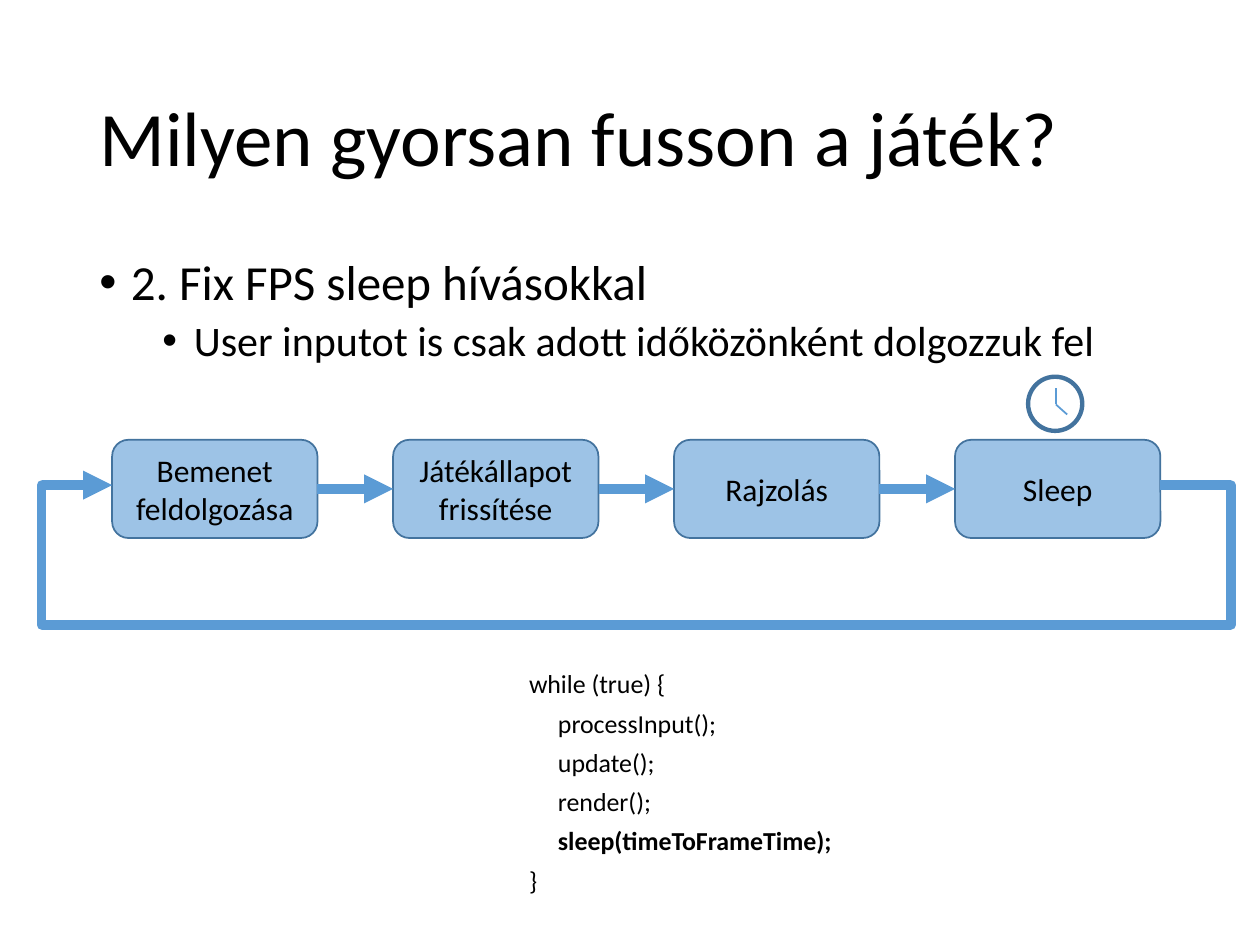
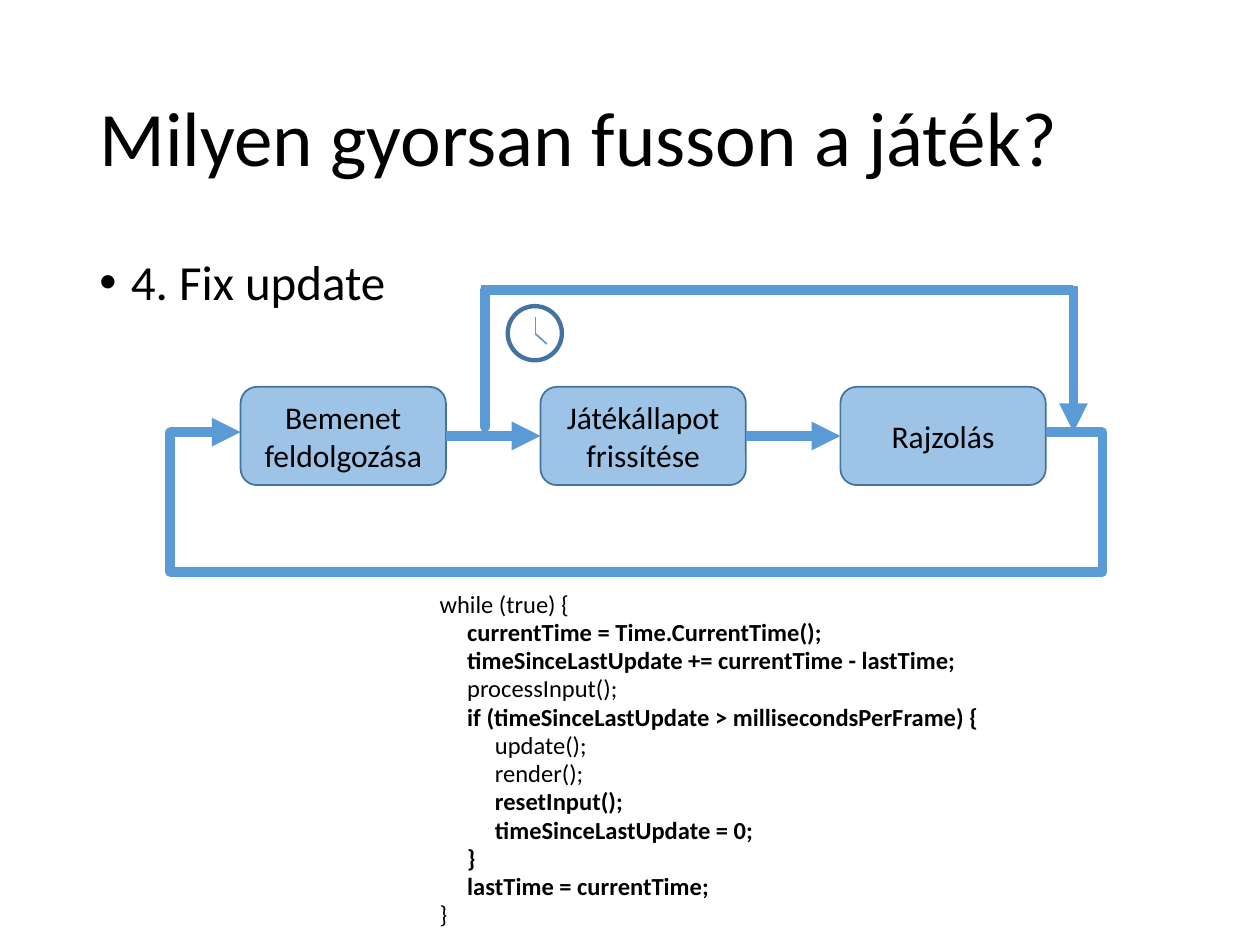
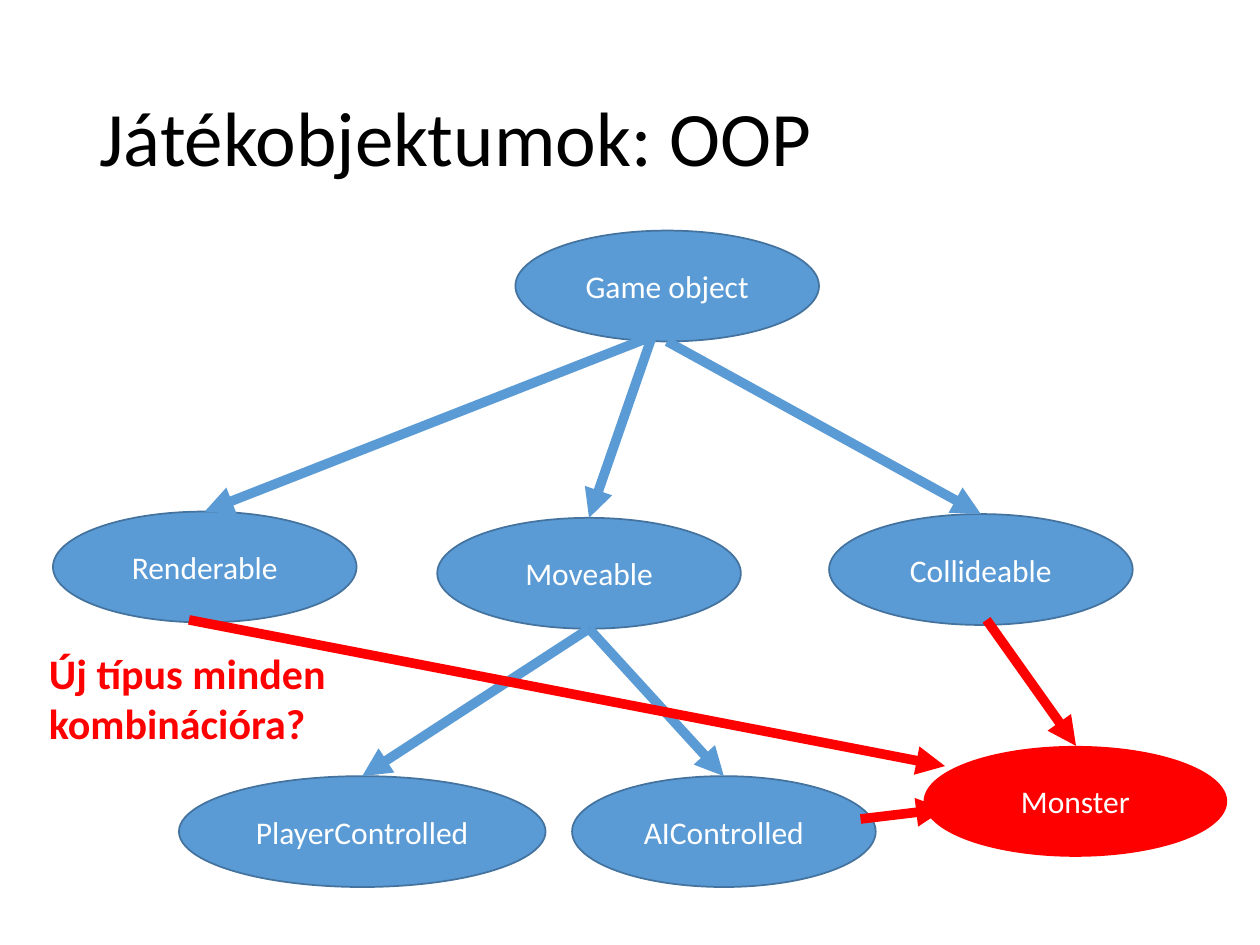
from itertools import pairwise

from lxml import etree
from pptx import Presentation
from pptx.dml.color import RGBColor
from pptx.enum.shapes import MSO_CONNECTOR, MSO_SHAPE
from pptx.enum.text import MSO_ANCHOR, PP_ALIGN
from pptx.oxml.ns import qn
from pptx.util import Inches, Pt

STRAIGHT = MSO_CONNECTOR.STRAIGHT
ROUNDED, OVAL = MSO_SHAPE.ROUNDED_RECTANGLE, MSO_SHAPE.OVAL
LEFT, CENTER = PP_ALIGN.LEFT, PP_ALIGN.CENTER
TOP, MIDDLE = MSO_ANCHOR.TOP, MSO_ANCHOR.MIDDLE
FONT = "Calibri"
BLACK, WHITE, RED = "000000", "FFFFFF", "FF0000"
BLUE, PALE_BLUE, DARK_BLUE = "5B9BD5", "9DC3E6", "43739E"

prs = Presentation()
prs.slide_width, prs.slide_height = Inches(10), Inches(7.5)
COL, ROW = prs.slide_width / 10, prs.slide_height / 7.5


def write(slide, lines, left, top, width, height, kind=None, fill=None, outline=None,
          weight=1, align=LEFT, anchor=TOP, **base):
    area = int(left * COL), int(top * ROW), int(width * COL), int(height * ROW)
    if kind is None:
        shape = slide.shapes.add_textbox(*area)
    else:
        shape = slide.shapes.add_shape(kind, *area)
        shape.shadow.inherit = False
        for paint, color in ((shape.fill, fill), (shape.line.fill, outline)):
            if color:
                paint.solid()
                paint.fore_color.rgb = RGBColor.from_string(color)
            else:
                paint.background()
        if outline:
            shape.line.width = Pt(weight)
    frame = shape.text_frame
    frame.word_wrap = True
    frame.vertical_anchor = anchor
    for number, (text, own) in enumerate(lines):
        style = {"size": 18, "color": BLACK, "bold": False, "spacing": 1, "before": 0,
                 "indent": 0, "bullet": False, **base, **own}
        paragraph = frame.add_paragraph() if number else frame.paragraphs[0]
        paragraph.alignment = align
        paragraph.line_spacing = style["spacing"]
        paragraph.space_before = Pt(style["before"])
        props = paragraph._p.get_or_add_pPr()
        props.set("marL", str(Inches(style["indent"])))
        if style["bullet"]:
            props.set("indent", str(-Inches(0.25)))
            etree.SubElement(props, qn("a:buFont"), typeface="Arial")
            etree.SubElement(props, qn("a:buChar"), char="•")
        run = paragraph.add_run()
        run.text = text
        run.font.name = FONT
        run.font.size = Pt(style["size"])
        run.font.bold = style["bold"]
        run.font.color.rgb = RGBColor.from_string(style["color"])


def connect(slide, start, end, color=BLUE, weight=5.5, arrow=False, cap="flat"):
    line = slide.shapes.add_connector(
        STRAIGHT, int(start[0] * COL), int(start[1] * ROW), int(end[0] * COL), int(end[1] * ROW))
    line.line.color.rgb = RGBColor.from_string(color)
    line.line.width = Pt(weight)
    stroke = line.line._get_or_add_ln()
    stroke.set("cap", cap)
    if arrow:
        etree.SubElement(stroke, qn("a:tailEnd"), type="triangle")
    etree.SubElement(line._element.spPr, qn("a:effectLst"))


SPEED = "Milyen gyorsan fusson a játék?"
slides = []
for title in (SPEED, SPEED, "Játékobjektumok: OOP"):
    slide = prs.slides.add_slide(prs.slide_layouts[6])
    write(slide, [(title, {})], 0.69, 0.4, 8.62, 1.45, anchor=MIDDLE, size=44, spacing=0.9)
    slides.append(slide)
sleep_slide, update_slide, oop_slide = slides

point = {"size": 28, "before": 10, "indent": 0.25}
subpoint = {"size": 24, "before": 5, "indent": 0.75}
steps = ["Bemenet feldolgozása", "Játékállapot frissítése", "Rajzolás"]
loops = [
    (sleep_slide,
     [("2. Fix FPS sleep hívásokkal", point),
      ("User inputot is csak adott időközönként dolgozzuk fel", subpoint)],
     steps + ["Sleep"], 0.89, 2.23, 3.49, 9.77, (8.38, 3.21)),
    (update_slide, [("4. Fix update", point)],
     steps, 1.91, 2.38, 3.07, 8.75, (4.25, 2.65)),
]
STEP_W, STEP_H = 1.63, 0.78
for slide, points, names, first, pitch, top, loop_right, (clock_x, clock_y) in loops:
    write(slide, points, 0.69, 2, 8.62, 4.76, spacing=0.9, bullet=True)

    lefts = [first + pitch * i for i in range(len(names))]
    for name, left in zip(names, lefts):
        write(slide, [(name, {})], left, top, STEP_W, STEP_H, ROUNDED, PALE_BLUE, DARK_BLUE,
              align=CENTER, anchor=MIDDLE)
    middle = top + STEP_H / 2
    for left, following in pairwise(lefts):
        connect(slide, (left + STEP_W, middle), (following, middle), arrow=True)

    loop_left, loop_top, loop_bottom = first - 0.56, top + 0.36, top + 1.47
    connect(slide, (lefts[-1] + STEP_W, loop_top), (loop_right, loop_top))
    connect(slide, (loop_left, loop_bottom), (loop_right, loop_bottom))
    connect(slide, (loop_left, loop_top), (first, loop_top), arrow=True)
    for x in (loop_left, loop_right):
        connect(slide, (x, loop_top), (x, loop_bottom), cap="rnd")

    write(slide, [], clock_x - 0.22, clock_y - 0.22, 0.43, 0.43, OVAL,
          outline=DARK_BLUE, weight=2.5)
    for dx, dy in ((0, -0.13), (0.09, 0.08)):
        connect(slide, (clock_x, clock_y), (clock_x + dx, clock_y + dy), weight=1)

detour_left, detour_right, detour_top = 3.85, 8.52, 2.3
connect(update_slide, (detour_left, detour_top), (detour_left, 3.39), cap="rnd")
connect(update_slide, (detour_left - 0.03, detour_top), (detour_right, detour_top))
connect(update_slide, (detour_right, detour_top - 0.03), (detour_right, 3.43), arrow=True)

sleep_code = [
    (0, "while (true) {", False),
    (1, "processInput();", False),
    (1, "update();", False),
    (1, "render();", False),
    (1, "sleep(timeToFrameTime);", True),
    (0, "}", False),
]
update_code = [
    (0, "while (true) {", False),
    (1, "currentTime = Time.CurrentTime();", True),
    (1, "timeSinceLastUpdate += currentTime - lastTime;", True),
    (1, "processInput();", False),
    (1, "if (timeSinceLastUpdate > millisecondsPerFrame) {", True),
    (2, "update();", False),
    (2, "render();", False),
    (2, "resetInput();", True),
    (2, "timeSinceLastUpdate = 0;", True),
    (1, "}", True),
    (1, "lastTime = currentTime;", True),
    (0, "}", False),
]
for slide, code, area, tab, style in (
    (sleep_slide, sleep_code, (4.1, 5.32, 2.75, 1.98), 0.23,
     {"size": 14.8, "spacing": 0.7, "before": 10}),
    (update_slide, update_code, (3.39, 4.65, 5.36, 2.54), 0.22,
     {"size": 14, "spacing": 0.9, "before": 1}),
):
    lines = [(text, {"indent": tab * level, "bold": bold}) for level, text, bold in code]
    write(slide, lines, *area, **style)

NODE_W, NODE_H = 2.41, 0.88
nodes = {
    "Game object": (4.09, 1.83, NODE_W),
    "Renderable": (0.42, 4.06, NODE_W),
    "Moveable": (3.47, 4.11, NODE_W),
    "Collideable": (6.58, 4.08, NODE_W),
    "PlayerControlled": (1.42, 6.16, 2.91),
    "AIControlled": (4.54, 6.16, NODE_W),
    "Monster": (7.33, 5.92, NODE_W),
}
for name, (left, top, width) in nodes.items():
    fill, outline = (RED, None) if name == "Monster" else (BLUE, DARK_BLUE)
    write(oop_slide, [(name, {})], left, top, width, NODE_H, OVAL, fill, outline,
          align=CENTER, anchor=MIDDLE, color=WHITE)

for parent, child, dx, dy in (
    ("Game object", "Renderable", -0.12, -0.04),
    ("Game object", "Moveable", -0.12, -0.04),
    ("Game object", "Collideable", 0, 0),
    ("Moveable", "PlayerControlled", 0, 0),
    ("Moveable", "AIControlled", 0, 0),
):
    left, top, width = nodes[parent]
    child_left, child_top, child_width = nodes[child]
    connect(oop_slide, (left + width / 2 + dx, top + NODE_H + dy),
            (child_left + child_width / 2, child_top), arrow=True)

for start, end in (
    ((7.83, 4.92), (8.54, 5.92)),
    ((6.83, 6.5), (7.5, 6.42)),
    ((1.5, 4.92), (7.5, 6.08)),
):
    connect(oop_slide, start, end, color=RED, arrow=True)

write(oop_slide, [("Új típus minden kombinációra?", {})], 0.29, 5.09, 2.52, 0.91,
      size=24, color=RED, bold=True)

prs.save("out.pptx")
